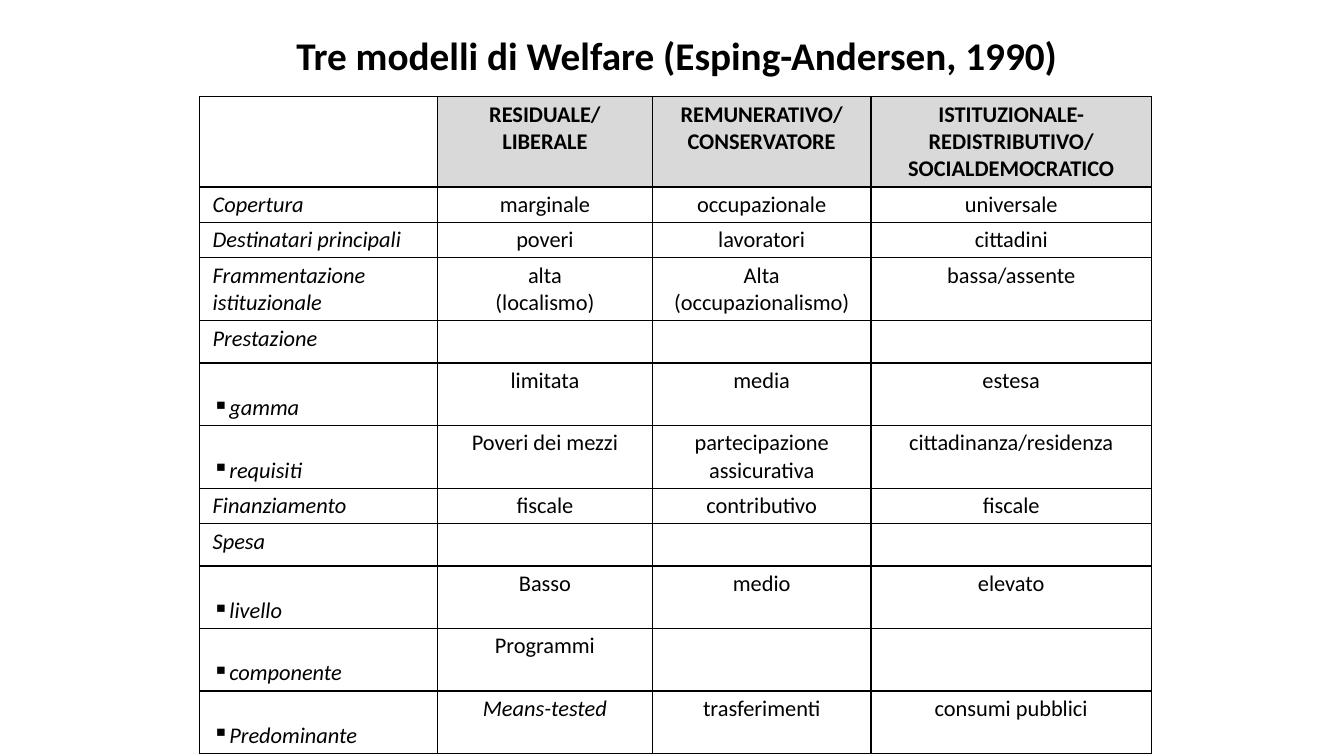
from lxml import etree
from pptx import Presentation
from pptx.dml.color import RGBColor
from pptx.enum.text import MSO_ANCHOR, PP_ALIGN
from pptx.oxml.ns import qn
from pptx.util import Inches, Pt

LEFT, CENTER = PP_ALIGN.LEFT, PP_ALIGN.CENTER
TOP, BOTTOM = MSO_ANCHOR.TOP, MSO_ANCHOR.BOTTOM
FONT = "Calibri"
BLACK, GREY = "000000", "D9D9D9"
BULLET = "▪"
TITLE = "Tre modelli di Welfare (Esping-Andersen, 1990)"
COLUMN_WIDTHS = [2.36, 2.13, 2.17, 2.78]
ROWS = [
    (0.89, ["", "RESIDUALE/\nLIBERALE", "REMUNERATIVO/\nCONSERVATORE",
            "ISTITUZIONALE-REDISTRIBUTIVO/ SOCIALDEMOCRATICO"]),
    (0.35, ["Copertura", "marginale", "occupazionale", "universale"]),
    (0.35, ["Destinatari principali", "poveri", "lavoratori", "cittadini"]),
    (0.62, ["Frammentazione istituzionale", "alta\n(localismo)",
            "Alta (occupazionalismo)", "bassa/assente"]),
    (0.42, ["Prestazione", "", "", ""]),
    (0.62, ["▪gamma", "limitata", "media", "estesa"]),
    (0.62, ["▪requisiti", "Poveri dei mezzi", "partecipazione assicurativa",
            "cittadinanza/residenza"]),
    (0.35, ["Finanziamento", "fiscale", "contributivo", "fiscale"]),
    (0.42, ["Spesa", "", "", ""]),
    (0.62, ["▪livello", "Basso", "medio", "elevato"]),
    (0.62, ["▪componente", "Programmi", "", ""]),
    (0.62, ["▪Predominante", "Means-tested", "trasferimenti", "consumi pubblici"]),
]
ITALIC_VALUES = {"Means-tested"}


def color(hex_value):
    """Return the colour for a hex string."""
    return RGBColor.from_string(hex_value)


def format_paragraph(paragraph, size, alignment, bold=False, italic=False):
    """Set the alignment and font of a paragraph."""
    paragraph.alignment = alignment
    font = paragraph.font
    font.name, font.size = FONT, Pt(size)
    font.bold, font.italic = bold, italic
    font.color.rgb = color(BLACK)


def add_bullet(paragraph):
    """Give a paragraph a square bullet without indent."""
    properties = paragraph._p.get_or_add_pPr()
    properties.set("marL", "0")
    properties.set("indent", "0")
    etree.SubElement(properties, qn("a:buChar")).set("char", BULLET)


def add_borders(cell):
    """Draw a thin black line on every side of a cell."""
    properties = cell._tc.get_or_add_tcPr()
    for side in ("a:lnL", "a:lnR", "a:lnT", "a:lnB"):
        line = etree.SubElement(properties, qn(side), w=str(Pt(1)))
        fill = etree.SubElement(line, qn("a:solidFill"))
        etree.SubElement(fill, qn("a:srgbClr"), val=BLACK)


def fill_cell(cell, text, is_header, is_label):
    """Write and format one cell of the table."""
    add_borders(cell)
    if is_header and text:
        cell.fill.solid()
        cell.fill.fore_color.rgb = color(GREY)
    else:
        cell.fill.background()
    cell.margin_left = cell.margin_right = Inches(0.13)
    cell.margin_top = cell.margin_bottom = Inches(0.04)
    bulleted = text.startswith(BULLET)
    cell.vertical_anchor = BOTTOM if bulleted else TOP
    cell.text_frame.text = text.removeprefix(BULLET)
    for paragraph in cell.text_frame.paragraphs:
        if bulleted:
            add_bullet(paragraph)
        format_paragraph(paragraph, 16, LEFT if is_label else CENTER,
                         bold=is_header,
                         italic=is_label or text in ITALIC_VALUES)


def add_title(slide):
    """Place and format the slide title."""
    title = slide.shapes.title
    title.left, title.top = Inches(2.14), Inches(0.23)
    title.width, title.height = Inches(9.14), Inches(0.6)
    frame = title.text_frame
    frame.text = TITLE
    frame.word_wrap = True
    frame.vertical_anchor = BOTTOM
    paragraph = frame.paragraphs[0]
    paragraph.line_spacing = 0.9
    format_paragraph(paragraph, 28, CENTER, bold=True)


def add_welfare_table(slide):
    """Add the table comparing the welfare models."""
    height = sum(row_height for row_height, _ in ROWS)
    table = slide.shapes.add_table(
        len(ROWS), len(COLUMN_WIDTHS), Inches(1.98), Inches(0.96),
        Inches(sum(COLUMN_WIDTHS)), Inches(height)).table
    table.first_row = table.horz_banding = False
    for column, width in zip(table.columns, COLUMN_WIDTHS):
        column.width = Inches(width)
    for row_index, (row_height, texts) in enumerate(ROWS):
        table.rows[row_index].height = Inches(row_height)
        for column_index, text in enumerate(texts):
            fill_cell(table.cell(row_index, column_index), text,
                      row_index == 0, column_index == 0)


def main():
    """Build and save the presentation."""
    presentation = Presentation()
    presentation.slide_width = Inches(13.33)
    presentation.slide_height = Inches(7.5)
    slide = presentation.slides.add_slide(presentation.slide_layouts[5])
    add_title(slide)
    add_welfare_table(slide)
    presentation.save("out.pptx")


if __name__ == "__main__":
    main()
